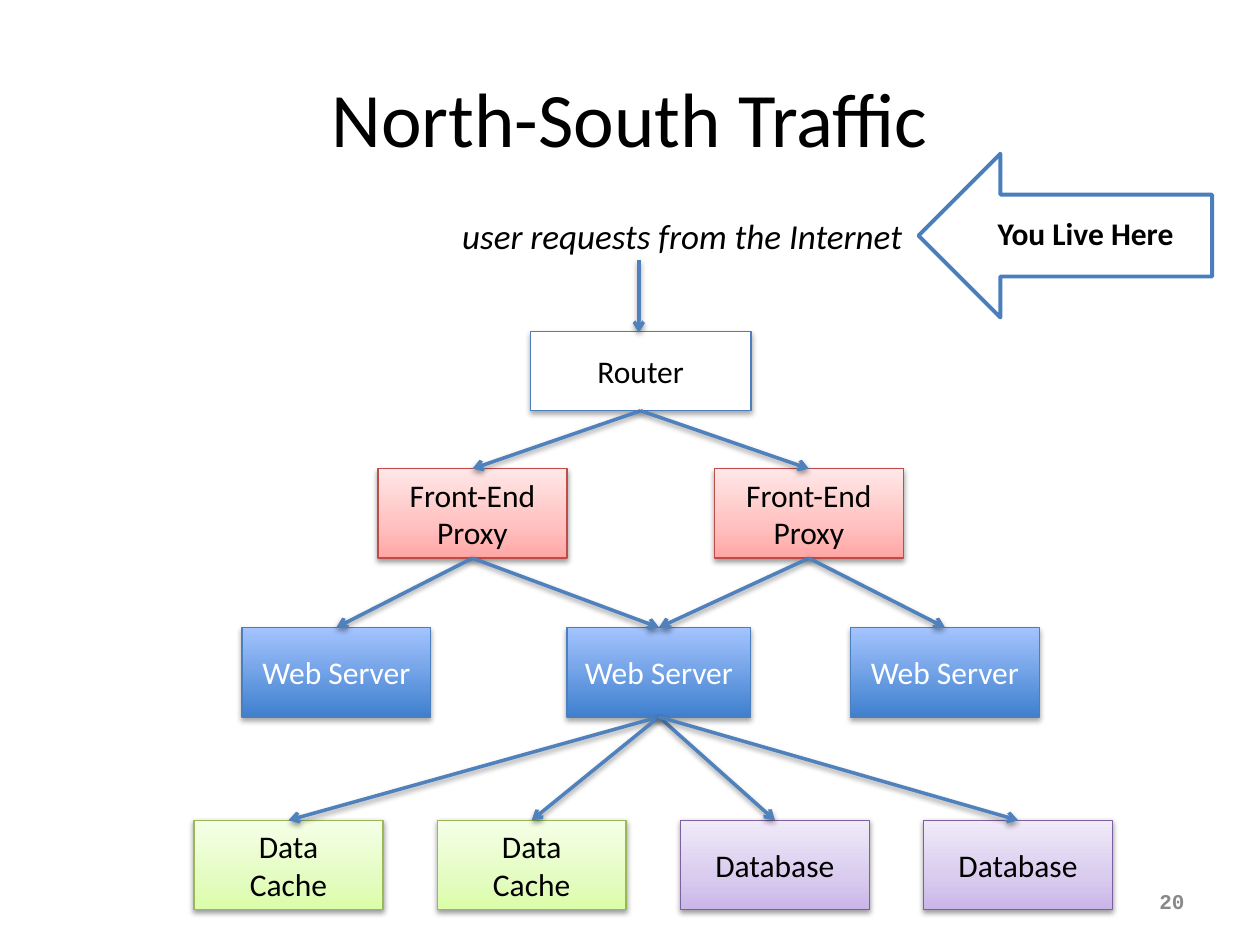
from dataclasses import dataclass
from typing import Optional

from lxml.etree import SubElement
from pptx import Presentation
from pptx.dml.color import RGBColor
from pptx.enum.shapes import MSO_CONNECTOR as Connector, MSO_SHAPE as Shape
from pptx.enum.text import MSO_ANCHOR as Anchor, PP_ALIGN as Align
from pptx.oxml.ns import qn
from pptx.util import Emu, Pt

PX = 9144  # EMU per px, 100 px to the inch
TOP, BOTTOM = 0, 2  # connection sites of a rectangle


@dataclass(frozen=True)
class Style:
    line: str
    stops: tuple[tuple[int, str], ...]  # percent from the bottom edge, colour
    text: str = "000000"
    shadow_alpha: int = 38
    shadow_distance: int = 20000


@dataclass(frozen=True)
class Theme:
    font: str = "Calibri"
    number_font: str = "Courier New"
    ink: str = "000000"
    muted: str = "898989"
    arrow: str = "4F81BD"
    outline: str = "4B7EBC"
    title_size: int = 44
    request_size: int = 20
    label_size: int = 18
    number_size: int = 12
    router: Style = Style("4B7EBC", ((0, "FFFFFF"),), "000000", 35, 23000)
    proxy: Style = Style("BF4C48", ((0, "FFA6A5"), (35, "FFC0BF"), (100, "FFE7E7")))
    server: Style = Style("4B7EBC", ((0, "3F80CE"), (100, "A4C4FF")), "FFFFFF", 35, 23000)
    cache: Style = Style("98B955", ((0, "DAFDA7"), (35, "E4FCC2"), (100, "F5FFE7")))
    database: Style = Style("7D60A0", ((0, "C9B5E8"), (35, "D8CBEE"), (100, "F0EAF9")))


@dataclass(frozen=True)
class Node:
    name: str
    label: str
    style: Style
    left: int
    top: int
    width: int = 150
    height: int = 71


THEME = Theme()
PROXY_TOP, SERVER_TOP, STORE_TOP = 372, 498, 651
STORE_LEFT, STORE_STEP = 154, 193
STORES = (
    ("cache 1", "Data\nCache", THEME.cache),
    ("cache 2", "Data\nCache", THEME.cache),
    ("database 1", "Database", THEME.database),
    ("database 2", "Database", THEME.database),
)
NODES = (
    Node("router", "Router", THEME.router, 421, 263, 175, 63),
    Node("proxy 1", "Front-End\nProxy", THEME.proxy, 300, PROXY_TOP),
    Node("proxy 2", "Front-End\nProxy", THEME.proxy, 567, PROXY_TOP),
    Node("server 1", "Web Server", THEME.server, 192, SERVER_TOP),
    Node("server 2", "Web Server", THEME.server, 450, SERVER_TOP, 146),
    Node("server 3", "Web Server", THEME.server, 675, SERVER_TOP),
    *(Node(name, label, style, STORE_LEFT + i * STORE_STEP, STORE_TOP)
      for i, (name, label, style) in enumerate(STORES)),
)
LINKS = {
    "router": ("proxy 1", "proxy 2"),
    "proxy 1": ("server 1", "server 2"),
    "proxy 2": ("server 2", "server 3"),
    "server 2": tuple(name for name, _, _ in STORES),
}


def px(*lengths: int) -> list[Emu]:
    return [Emu(length * PX) for length in lengths]


def rgb(colour: str) -> RGBColor:
    return RGBColor.from_string(colour)


def write(box, text: str, *, size: int = THEME.label_size, font: str = THEME.font,
          colour: str = THEME.ink, bold: bool = False, italic: bool = False,
          align: Optional[Align] = None, anchor: Anchor = Anchor.TOP,
          wrap: bool = True) -> None:
    """Fill a shape or text box, one paragraph per line of text."""
    frame = box.text_frame
    frame.word_wrap = wrap
    frame.vertical_anchor = anchor
    frame.text = text
    for para in frame.paragraphs:
        para.alignment = align
        for span in para.runs:
            span.font.name, span.font.size = font, Pt(size)
            span.font.bold, span.font.italic = bold, italic
            span.font.color.rgb = rgb(colour)


def add_text(page, left: int, top: int, width: int, height: int, text: str, **look) -> None:
    write(page.shapes.add_textbox(*px(left, top, width, height)), text, **look)


def add_shadow(shape, alpha: int = 38, distance: int = 20000) -> None:
    """Cast a soft shadow straight down; call after the line is set."""
    effects = SubElement(shape._element.spPr, qn("a:effectLst"))
    shadow = SubElement(effects, qn("a:outerShdw"), blurRad="40000", dist=str(distance),
                        dir="5400000", rotWithShape="0")
    black = SubElement(shadow, qn("a:srgbClr"), val="000000")
    SubElement(black, qn("a:alpha"), val=str(alpha * 1000))


def paint(shape, stops: tuple[tuple[int, str], ...]) -> None:
    """Fill with one colour, or with a gradient rising from the bottom."""
    if len(stops) == 1:
        shape.fill.solid()
        shape.fill.fore_color.rgb = rgb(stops[0][1])
        return
    shape.fill.gradient()
    shape.fill.gradient_angle = 90
    stop_list = shape._element.spPr.find(".//" + qn("a:gsLst"))
    stop_list.clear()
    for percent, colour in stops:
        stop = SubElement(stop_list, qn("a:gs"), pos=str(percent * 1000))
        SubElement(stop, qn("a:srgbClr"), val=colour)


def add_node(page, node: Node):
    style = node.style
    box = page.shapes.add_shape(Shape.RECTANGLE,
                                *px(node.left, node.top, node.width, node.height))
    paint(box, style.stops)
    box.line.color.rgb = rgb(style.line)
    box.line.width = Pt(0.75)
    add_shadow(box, style.shadow_alpha, style.shadow_distance)
    write(box, node.label, colour=style.text, align=Align.CENTER, anchor=Anchor.MIDDLE)
    return box


def add_arrow(page, x1: int = 0, y1: int = 0, x2: int = 0, y2: int = 0):
    arrow = page.shapes.add_connector(Connector.STRAIGHT, *px(x1, y1, x2, y2))
    arrow.line.color.rgb = rgb(THEME.arrow)
    arrow.line.width = Pt(2)
    SubElement(arrow.line._get_or_add_ln(), qn("a:tailEnd"), type="arrow")
    add_shadow(arrow)
    return arrow


def add_callout(page) -> None:
    callout = page.shapes.add_shape(Shape.LEFT_ARROW, *px(729, 122, 233, 130))
    callout.fill.background()
    callout.line.color.rgb = rgb(THEME.outline)
    callout.line.width = Pt(2.25)
    callout.shadow.inherit = False
    add_text(page, 782, 165, 169, 40, "You Live Here", bold=True)


def main() -> None:
    deck = Presentation()
    deck.slide_width, deck.slide_height = px(1000, 750)
    page = deck.slides.add_slide(deck.slide_layouts[6])

    add_text(page, 50, 30, 900, 125, "North-South Traffic", size=THEME.title_size,
             align=Align.CENTER, anchor=Anchor.MIDDLE)
    add_text(page, 717, 695, 233, 40, "20", size=THEME.number_size, font=THEME.number_font,
             colour=THEME.muted, bold=True, align=Align.RIGHT, anchor=Anchor.MIDDLE)

    boxes = {node.name: add_node(page, node) for node in NODES}
    for source, targets in LINKS.items():
        for target in targets:
            arrow = add_arrow(page)
            arrow.begin_connect(boxes[source], BOTTOM)
            arrow.end_connect(boxes[target], TOP)

    add_arrow(page, 507, 206, 507, 264)
    add_text(page, 357, 165, 380, 44, "user requests from the Internet",
             size=THEME.request_size, italic=True, wrap=False)
    add_callout(page)
    deck.save("out.pptx")


if __name__ == "__main__":
    main()
